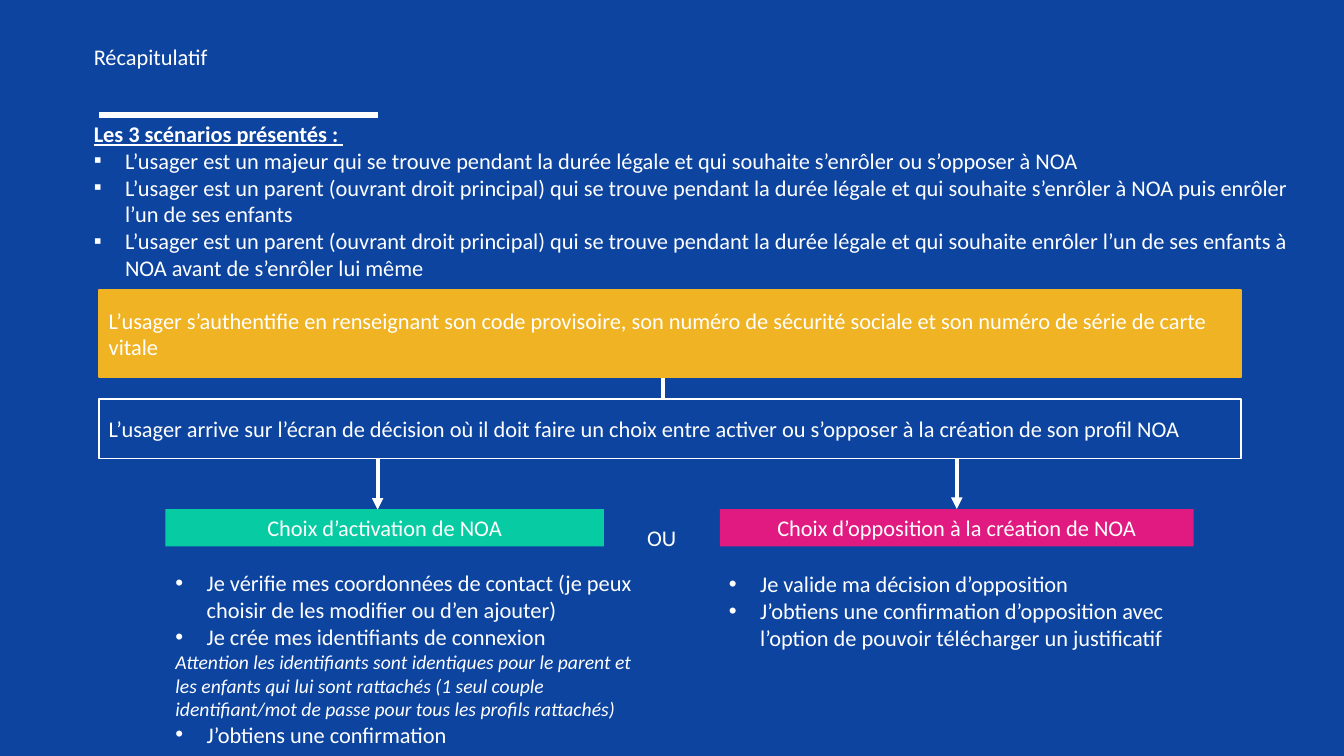
"""Build the recap slide of the NOA enrolment and opposition scenarios."""
import pptx
import pptx.dml.color
import pptx.enum.shapes
import pptx.enum.text
import pptx.oxml.ns
import pptx.util
from lxml import etree

Inches = pptx.util.Inches
Pt = pptx.util.Pt
RGB = pptx.dml.color.RGBColor.from_string
qn = pptx.oxml.ns.qn
ALIGN = pptx.enum.text.PP_ALIGN
ANCHOR = pptx.enum.text.MSO_ANCHOR
CONNECTOR = pptx.enum.shapes.MSO_CONNECTOR

THEME = {
    "font": "Calibri", "size": 16, "note": 14,
    "blue": RGB("0C44A0"), "white": RGB("FFFFFF"), "amber": RGB("F0B323"),
    "green": RGB("07CBA2"), "pink": RGB("E11A81"),
}


def write(sp, paragraphs, align=ALIGN.LEFT, anchor=ANCHOR.TOP, pad=0.05):
    """Fill a shape with (text, bullet, style) paragraphs."""
    tf = sp.text_frame
    tf.word_wrap = True
    tf.auto_size = pptx.enum.text.MSO_AUTO_SIZE.NONE
    tf.vertical_anchor = anchor
    tf.margin_left = tf.margin_right = Inches(0.1)
    tf.margin_top = tf.margin_bottom = Inches(pad)
    for i, (text, bullet, style) in enumerate(paragraphs):
        p = tf.paragraphs[0] if i == 0 else tf.add_paragraph()
        pPr = p._p.get_or_add_pPr()
        indent = Inches(0.31) if bullet else 0
        pPr.set("marL", str(indent))
        pPr.set("indent", str(-indent))
        if bullet:
            etree.SubElement(pPr, qn("a:buFont"), typeface="Arial")
            etree.SubElement(pPr, qn("a:buChar"), char=bullet)
        else:
            etree.SubElement(pPr, qn("a:buNone"))
        p.alignment = align
        p.line_spacing = 1.0
        p.space_before = p.space_after = Pt(0)
        r = p.add_run()
        r.text = text
        r.font.name = THEME["font"]
        r.font.size = Pt(THEME["note"] if style == "note" else THEME["size"])
        r.font.color.rgb = THEME["white"]
        r.font.bold = r.font.underline = style == "heading"
        r.font.italic = style == "note"


def connect(kind, x1, y1, x2, y2, width):
    """Draw a white connector without shadow."""
    cx = s.shapes.add_connector(kind, Inches(x1), Inches(y1), Inches(x2), Inches(y2))
    cx.line.color.rgb = THEME["white"]
    cx.line.width = Pt(width)
    etree.SubElement(cx._element.spPr, qn("a:effectLst"))
    return cx


prs = pptx.Presentation()
prs.slide_width, prs.slide_height = Inches(13.33), Inches(7.5)
s = prs.slides.add_slide(prs.slide_layouts.get_by_name("Comparison"))
s.background.fill.solid()
s.background.fill.fore_color.rgb = THEME["blue"]

texts = [
    (0, (0.83, 0.38, 2.29, 0.37), [("Récapitulatif", None, None)]),
    (1, (0.83, 1.14, 12.06, 2.26), [
        ("Les 3 scénarios présentés : ", None, "heading"),
        ("L’usager est un majeur qui se trouve pendant la durée légale et qui souhaite "
         "s’enrôler ou s’opposer à NOA", "▪", None),
        ("L’usager est un parent (ouvrant droit principal) qui se trouve pendant la durée "
         "légale et qui souhaite s’enrôler à NOA puis enrôler l’un de ses enfants", "▪", None),
        ("L’usager est un parent (ouvrant droit principal) qui se trouve pendant la durée "
         "légale et qui souhaite enrôler l’un de ses enfants à NOA avant de s’enrôler "
         "lui même", "▪", None),
    ]),
    (2, (1.64, 5.6, 4.81, 1.88), [
        ("Je vérifie mes coordonnées de contact (je peux choisir de les modifier ou d’en "
         "ajouter)", "•", None),
        ("Je crée mes identifiants de connexion", "•", None),
        ("Attention les identifiants sont identiques pour le parent et les enfants qui lui "
         "sont rattachés (1 seul couple identifiant/mot de passe pour tous les profils "
         "rattachés)", None, "note"),
        ("J’obtiens une confirmation", "•", None),
    ]),
    (4, (7.13, 5.61, 5.01, 1.72), [
        ("Je valide ma décision d’opposition", "•", None),
        ("J’obtiens une confirmation d’opposition avec l’option de pouvoir télécharger un "
         "justificatif", "•", None),
    ]),
]
holders = {ph.placeholder_format.idx: ph for ph in s.placeholders}
for idx, box, paragraphs in texts:
    sp = holders.pop(idx)
    sp.left, sp.top, sp.width, sp.height = map(Inches, box)
    write(sp, paragraphs)
for unused in holders.values():
    unused._element.getparent().remove(unused._element)

connect(CONNECTOR.STRAIGHT, 0.98, 1.14, 3.75, 1.14, 3.75)
to_opposition = connect(CONNECTOR.ELBOW, 6.57, 4.39, 9.49, 5.05, 2.75)
to_opposition._element.spPr.find(qn("a:prstGeom")).set("prst", "bentConnector2")
to_activation = connect(CONNECTOR.ELBOW, 4.5, 2.98, 5.82, 5.81, 2.75)
to_activation._element.spPr.find(qn("a:xfrm")).set("rot", "5400000")
for arrow in (to_opposition, to_activation):
    etree.SubElement(arrow.line._get_or_add_ln(), qn("a:tailEnd"), type="triangle")

steps = [
    ((0.98, 2.88, 11.33, 0.86), "amber", "amber", ALIGN.LEFT, 0.16,
     "L’usager s’authentifie en renseignant son code provisoire, son numéro de sécurité "
     "sociale et son numéro de série de carte vitale"),
    ((0.98, 3.96, 11.33, 0.59), "blue", "white", ALIGN.LEFT, 0.16,
     "L’usager arrive sur l’écran de décision où il doit faire un choix entre activer ou "
     "s’opposer à la création de son profil NOA"),
    ((1.64, 5.05, 4.35, 0.37), "green", None, ALIGN.CENTER, 0.05,
     "Choix d’activation de NOA"),
    ((7.14, 5.05, 4.7, 0.37), "pink", None, ALIGN.CENTER, 0.05,
     "Choix d’opposition à la création de NOA"),
]
for box, fill, border, align, pad, text in steps:
    sp = s.shapes.add_shape(pptx.enum.shapes.MSO_SHAPE.RECTANGLE, *map(Inches, box))
    sp.shadow.inherit = False
    sp.fill.solid()
    sp.fill.fore_color.rgb = THEME[fill]
    if border:
        sp.line.color.rgb = THEME[border]
        sp.line.width = Pt(1.25)
    else:
        sp.line.fill.background()
    write(sp, [(text, None, None)], align, ANCHOR.MIDDLE, pad)

either = s.shapes.add_textbox(Inches(6.32), Inches(5.15), Inches(0.58), Inches(0.37))
write(either, [("OU", None, None)])

prs.save("out.pptx")
